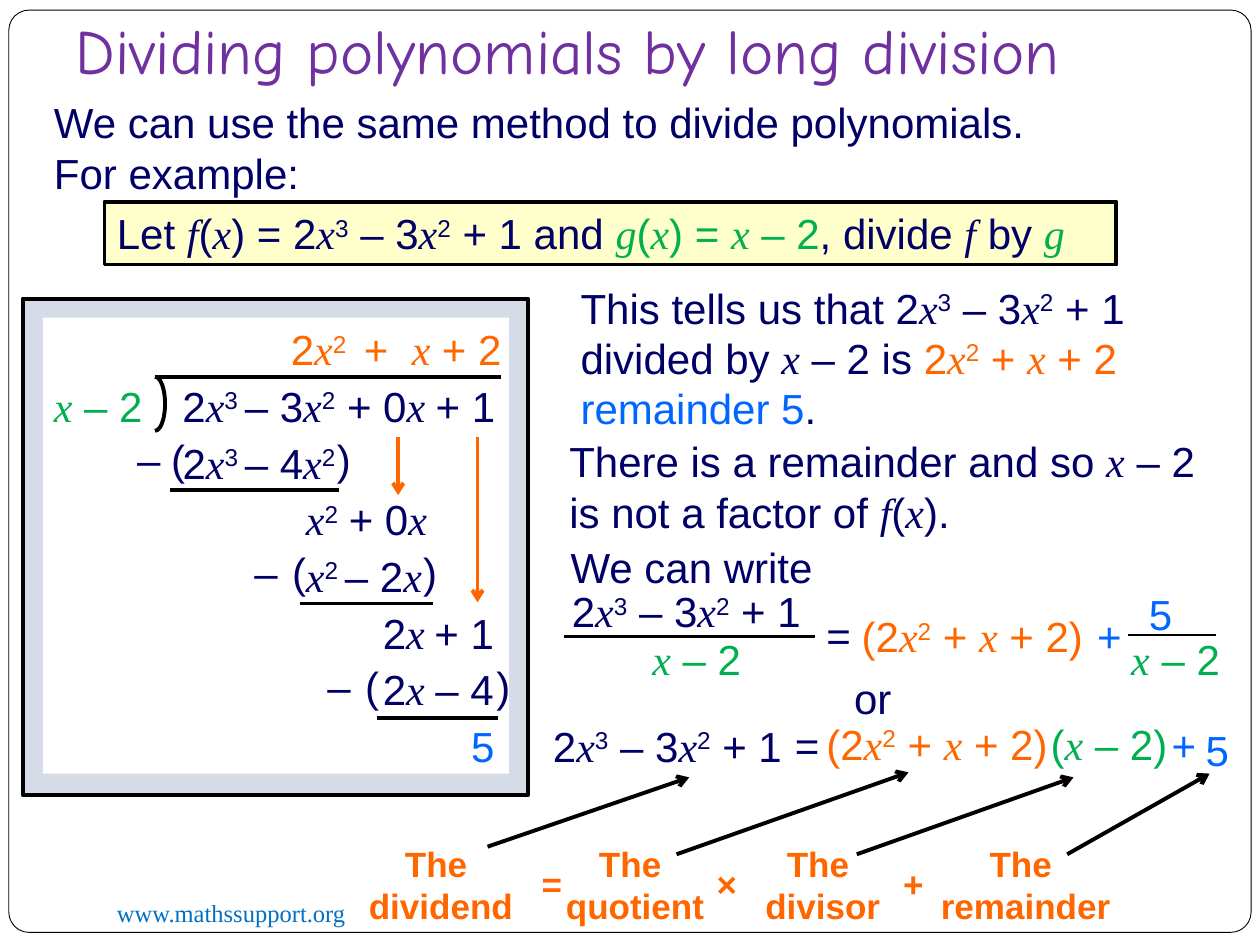
from dataclasses import dataclass

from lxml.etree import SubElement
from pptx import Presentation
from pptx.dml.color import RGBColor
from pptx.enum.shapes import MSO_CONNECTOR, MSO_SHAPE
from pptx.enum.text import MSO_ANCHOR, MSO_AUTO_SIZE, PP_ALIGN
from pptx.oxml.ns import qn
from pptx.util import Inches, Pt


@dataclass(frozen=True)
class Theme:
    navy: str = "010066"
    orange: str = "FF6600"
    green: str = "00B050"
    blue: str = "0066FF"
    purple: str = "7030A0"
    link: str = "0070C0"
    black: str = "000000"
    white: str = "FFFFFF"
    cream: str = "FFFFCC"
    mist: str = "D5DCE7"
    sans: str = "Arial"
    serif: str = "Times New Roman"
    display: str = "Comic Neue"
    title: int = 36
    body: int = 24
    label: int = 20
    footer: int = 14
    heavy: float = 2.25
    medium: float = 1.5
    thin: float = 0.5

    def color(self, name):
        return RGBColor.from_string(getattr(self, name))


THEME = Theme()
COLUMNS, ROWS = 100, 75
CELL = Inches(10) / COLUMNS
DIVIDEND = "2*x*^3^ – 3*x*^2^ + 1"
QUOTIENT = "2*x*^2^ + *x* + 2"
DIVISOR = "*x* – 2"


def grid(*lengths):
    return [round(length * CELL) for length in lengths]


def working_row(index):
    return 25.2 + 4.5 * index


def add_runs(paragraph, text, color, size, font, bold):
    for segment in f"<{color}>{text}".split("<")[1:]:
        name, body = segment.split(">", 1)
        for letter_index, piece in enumerate(body.split("*")):
            for power_index, words in enumerate(piece.split("^")):
                if not words:
                    continue
                variable = letter_index % 2 == 1
                run = paragraph.add_run()
                run.text = words
                run.font.size = Pt(size)
                run.font.name = THEME.serif if variable else font
                run.font.italic = variable
                run.font.bold = bold
                run.font.color.rgb = THEME.color(name)
                if power_index % 2:
                    run._r.get_or_add_rPr().set("baseline", "30000")


def write(frame, text, color="navy", size=THEME.body, font=THEME.sans, bold=False,
          align=PP_ALIGN.LEFT, anchor=MSO_ANCHOR.TOP, wrap=False,
          fit=MSO_AUTO_SIZE.SHAPE_TO_FIT_TEXT):
    frame.word_wrap = wrap
    frame.auto_size = fit
    frame.vertical_anchor = anchor
    for index, line in enumerate(text.split("\n")):
        paragraph = frame.paragraphs[0] if index == 0 else frame.add_paragraph()
        paragraph.alignment = align
        add_runs(paragraph, line, color, size, font, bold)


def add_text(slide, left, top, width, text, height=5, **style):
    box = slide.shapes.add_textbox(*grid(left, top, width, height))
    write(box.text_frame, text, **style)


def add_panel(slide, kind, box, fill=None, line=None, weight=THEME.heavy, adjustment=None):
    shape = slide.shapes.add_shape(kind, *grid(*box))
    shape.shadow.inherit = False
    if adjustment is not None:
        shape.adjustments[0] = adjustment
    if fill:
        shape.fill.solid()
        shape.fill.fore_color.rgb = THEME.color(fill)
    else:
        shape.fill.background()
    if line:
        shape.line.color.rgb = THEME.color(line)
        shape.line.width = Pt(weight)
    else:
        shape.line.fill.background()
    return shape


def add_line(slide, start, end, color="black", weight=THEME.heavy, arrow=False):
    connector = slide.shapes.add_connector(MSO_CONNECTOR.STRAIGHT, *grid(*start, *end))
    connector.line.color.rgb = THEME.color(color)
    connector.line.width = Pt(weight)
    if arrow:
        SubElement(connector.line._get_or_add_ln(), qn("a:tailEnd"), type="arrow")
    SubElement(connector._element.spPr, qn("a:effectLst"))


def add_rule(slide, left, right, row, weight=THEME.heavy):
    add_line(slide, (left, row), (right, row), weight=weight)


def add_heading(slide):
    add_panel(slide, MSO_SHAPE.ROUNDED_RECTANGLE, (0.7, 0.8, 98.6, 73.2),
              "white", "black", THEME.thin, 0.022)
    add_text(slide, 8.3, 70.8, 32.5, "www.mathssupport.org", 3.4, color="link",
             size=THEME.footer, font=THEME.serif, wrap=True)
    title = slide.shapes.title
    slide.shapes._spTree.append(title._element)
    title.left, title.top, title.width, title.height = grid(5, 2.1, 88.3, 5.8)
    frame = title.text_frame
    frame.margin_left, frame.margin_top, frame.margin_right, frame.margin_bottom = grid(1, 0.5, 1, 1)
    write(frame, "Dividing polynomials by long division", color="purple", size=THEME.title,
          font=THEME.display, anchor=MSO_ANCHOR.BOTTOM, wrap=True, fit=MSO_AUTO_SIZE.NONE)
    add_text(slide, 3.3, 7.2, 95.9,
             "We can use the same method to divide polynomials.\nFor example:", 9, wrap=True)
    problem = add_panel(slide, MSO_SHAPE.RECTANGLE, (8.3, 16, 80.3, 5), "cream", "black")
    write(problem.text_frame,
          f"Let *f*(*x*) = {DIVIDEND} and <green>*g*(*x*) = {DIVISOR}"
          "<navy>, divide *f* by <green>*g*")


def add_long_division(slide):
    add_panel(slide, MSO_SHAPE.RECTANGLE, (1.8, 23.7, 40.1, 39.4), "mist", "black")
    add_panel(slide, MSO_SHAPE.RECTANGLE, (3.4, 25.2, 37, 36.2), "white")
    add_panel(slide, MSO_SHAPE.RIGHT_BRACKET, (12.3, 29.9, 0.8, 4.3),
              line="black", adjustment=2.707)
    terms = [
        (0, 22.1, 6.6, "<orange>2*x*^2^"),
        (0, 27.9, 4, "<orange>+"),
        (0, 31.7, 3.5, "<orange>*x*"),
        (0, 34.1, 6.7, "<orange>+ 2"),
        (1, 3.3, 9.4, f"<green>{DIVISOR}"),
        (1, 13.5, 27.3, "2*x*^3 ^– 3*x*^2^ + 0*x *+ 1"),
        (2, 13.5, 14.5, "2*x*^3 ^– 4*x*^2^"),
        (3, 23.3, 4.7, "*x*^2^"),
        (3, 26.7, 8.2, "+ 0*x*"),
        (4, 23.3, 11.5, "*x*^2 ^– 2*x*"),
        (5, 29.4, 5.3, "2*x*"),
        (5, 33.5, 6.7, "+ 1"),
        (6, 29.4, 10.8, "2*x *– 4"),
        (7, 36.4, 3.9, "<blue>5"),
    ]
    for row, left, width, text in terms:
        add_text(slide, left, working_row(row), width, text)
    subtractions = [(2, 9.9, 12.6, 25.75), (4, 19.2, 22.2, 32.6), (6, 25, 28, 38.4)]
    for row, minus, opening, closing in subtractions:
        for left, width, mark in ((minus, 3.9, "–"), (opening, 3.1, "("), (closing, 3.1, ")")):
            add_text(slide, left, working_row(row) - 0.3, width, mark)
    for left, right, row in ((12.3, 39.8, 29.9), (13.5, 26.9, 38.9),
                             (23.8, 34.4, 47.9), (29.9, 39.5, 57)):
        add_rule(slide, left, right, row)
    for column, end in ((31.6, 39.3), (37.9, 47.8)):
        add_line(slide, (column, 34.7), (column, end), "orange", arrow=True)


def add_conclusion(slide):
    add_text(slide, 45.1, 21.9, 55,
             f"This tells us that {DIVIDEND} divided by {DIVISOR} is "
             f"<orange>{QUOTIENT} <blue>remainder 5<navy>.", 13, wrap=True)
    add_text(slide, 44.2, 34.1, 52.6,
             f"There is a remainder and so {DIVISOR}\nis not a factor of *f*(*x*).", 9)
    terms = [
        (44.3, 42.5, 21.3, "We can write"),
        (44.4, 46, 20.7, DIVIDEND),
        (50.8, 49.8, 9.4, f"<green>{DIVISOR}"),
        (64.6, 47.9, 4, "="),
        (67.4, 48, 19.9, f"<orange>({QUOTIENT})"),
        (86.1, 48, 4, "<blue>+"),
        (90.2, 46.2, 3.9, "<blue>5"),
        (88.8, 49.8, 9.4, f"<green>{DIVISOR}"),
        (66.8, 52.9, 5, "or"),
        (42.9, 56.7, 20.7, DIVIDEND),
        (62.1, 56.6, 4, "="),
        (64.6, 56.5, 19.9, f"<orange>({QUOTIENT})"),
        (82.4, 56.5, 11.6, f"<green>({DIVISOR})"),
        (92, 56.6, 4, "<blue>+"),
        (94.7, 57, 3.9, "<blue>5"),
    ]
    for left, top, width, text in terms:
        add_text(slide, left, top, width, text)
    add_rule(slide, 44.8, 64.7, 50.5, THEME.medium)
    add_rule(slide, 89.5, 96.5, 50.4, THEME.medium)


def add_names(slide):
    style = dict(color="orange", size=THEME.label, bold=True)
    names = [(35, 14, "dividend"), (50.4, 13.8, "quotient"),
             (65.3, 11.8, "divisor"), (81.4, 16.2, "remainder")]
    for center, width, name in names:
        add_text(slide, center - width / 2, 66.4, width, f"The \n{name}", 7.7,
                 align=PP_ALIGN.CENTER, **style)
    for left, sign in ((42, "="), (55.9, "×"), (70.7, "+")):
        add_text(slide, left, 68, 3.6, sign, 4.3, **style)
    for start, end in (((38.7, 67.2), (54.7, 61.7)), ((53.7, 67.8), (72.1, 61.3)),
                       ((68, 67.8), (85.2, 61.7)), ((84.7, 67.8), (96, 61.4))):
        add_line(slide, start, end, arrow=True)


def main():
    presentation = Presentation()
    presentation.slide_width, presentation.slide_height = grid(COLUMNS, ROWS)
    slide = presentation.slides.add_slide(presentation.slide_layouts[5])
    add_heading(slide)
    add_long_division(slide)
    add_conclusion(slide)
    add_names(slide)
    presentation.save("out.pptx")


if __name__ == "__main__":
    main()
